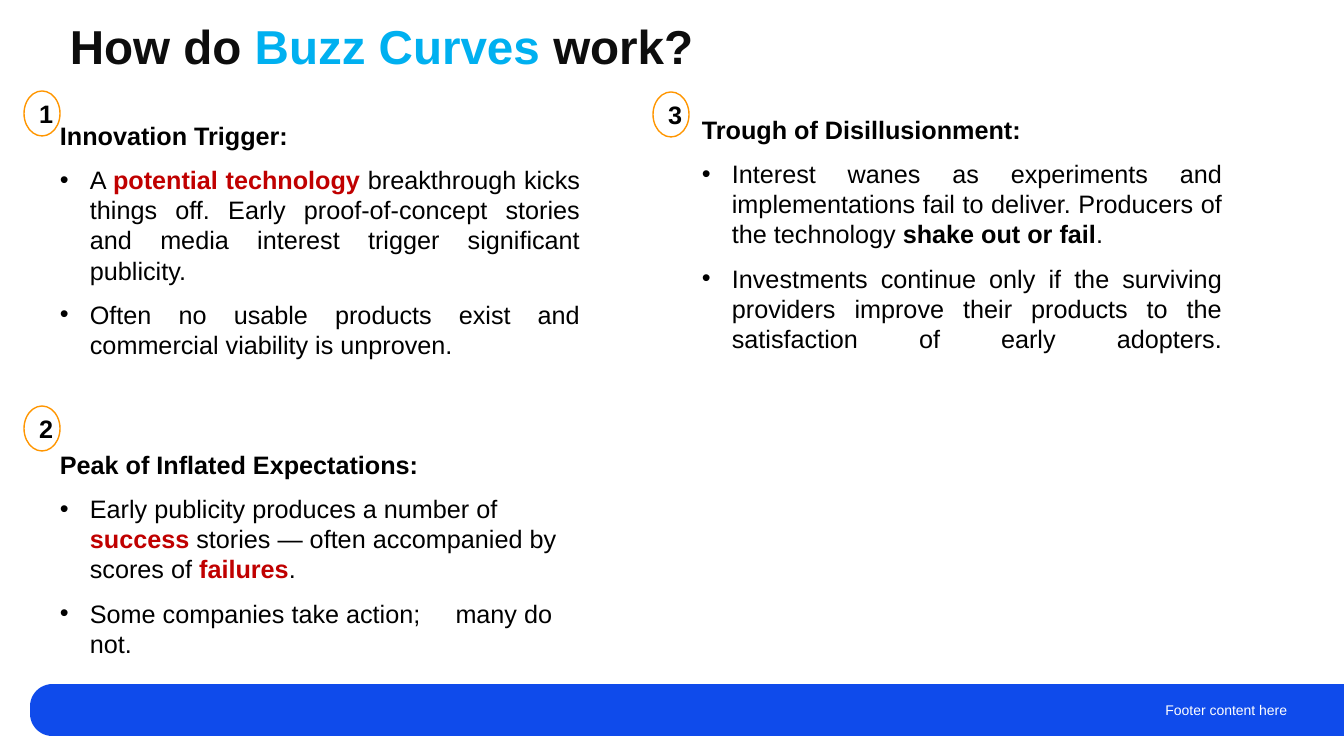
from dataclasses import dataclass

from lxml.etree import SubElement
from pptx import Presentation
from pptx.dml.color import RGBColor
from pptx.enum.shapes import MSO_SHAPE
from pptx.enum.text import MSO_ANCHOR, PP_ALIGN
from pptx.oxml.ns import qn
from pptx.util import Emu, Pt

EMU_PER_PX = 914400 / 100.8
FONT = "Arial"
BLACK, WHITE, RED = "000000", "FFFFFF", "C00000"
NEAR_BLACK, SKY_BLUE = "0D0D0D", "00B0F0"
ORANGE, FOOTER_BLUE = "FF9600", "0F4BEB"
BULLET_INDENT = 30
COLUMN_WIDTH = 540


@dataclass
class Span:
    text: str
    color: str = BLACK
    bold: bool = False
    spacing: int = 0  # extra letter spacing in points


@dataclass
class Phase:
    number: str
    badge_left: int
    badge_top: int
    text_left: int
    text_top: int
    text_height: int
    heading: str
    bullets: list[list[Span]]
    align: PP_ALIGN = PP_ALIGN.JUSTIFY


PHASES = [
    Phase("1", 24, 91, 50, 115, 260, "Innovation Trigger:", [
        [Span("A "), Span("potential technology ", RED, True),
         Span("breakthrough kicks things off. Early proof-of-concept stories "
              "and media interest trigger significant publicity.")],
        [Span("Often no usable products exist and commercial viability is unproven.")],
    ]),
    Phase("2", 24, 406, 50, 444, 230, "Peak of Inflated Expectations:", [
        [Span("Early publicity produces a number of "), Span("success", RED, True),
         Span(" stories — often accompanied by scores of "),
         Span("failures", RED, True), Span(".")],
        [Span("Some companies take action;"), Span(" ", spacing=20), Span("many do not.")],
    ], PP_ALIGN.LEFT),
    Phase("3", 653, 92, 692, 109, 290, "Trough of Disillusionment:", [
        [Span("Interest wanes as experiments and implementations fail to deliver. "
              "Producers of the technology "),
         Span("shake out or fail", bold=True), Span(".")],
        # The closing line break justifies the last line as well.
        [Span("Investments continue only if the surviving providers improve their "
              "products to the satisfaction of early adopters.\v")],
    ]),
]


def px(length: int) -> Emu:
    return Emu(round(length * EMU_PER_PX))


def rgb(color: str) -> RGBColor:
    return RGBColor.from_string(color)


def add_bullet(paragraph) -> None:
    properties = paragraph._p.get_or_add_pPr()
    properties.set("marL", str(px(BULLET_INDENT)))
    properties.set("indent", str(-px(BULLET_INDENT)))
    SubElement(properties, qn("a:buFont"), typeface=FONT)
    SubElement(properties, qn("a:buChar"), char="•")


def write_paragraph(paragraph, spans: list[Span], *, size: int = 18,
                    align: PP_ALIGN = PP_ALIGN.LEFT, space_after: int = 0,
                    line_spacing: float = 1.0, bullet: bool = False) -> None:
    paragraph.alignment = align
    paragraph.space_after = Pt(space_after)
    paragraph.line_spacing = line_spacing
    if bullet:
        add_bullet(paragraph)
    paragraph.font.size = Pt(size)
    for span in spans:
        # add_run keeps no line breaks, so each break is added between runs.
        for index, part in enumerate(span.text.split("\v")):
            if index:
                paragraph.add_line_break()
            if not part:
                continue
            run = paragraph.add_run()
            run.text = part
            run.font.name = FONT
            run.font.size = Pt(size)
            run.font.bold = span.bold
            run.font.color.rgb = rgb(span.color)
            if span.spacing:
                run.font._element.set("spc", str(span.spacing * 100))


def add_text_frame(slide, left: int, top: int, width: int, height: int,
                   anchor: MSO_ANCHOR = MSO_ANCHOR.TOP):
    frame = slide.shapes.add_textbox(px(left), px(top), px(width), px(height)).text_frame
    frame.word_wrap = True
    frame.vertical_anchor = anchor
    return frame


def add_filled_shape(slide, kind: MSO_SHAPE, left: int, top: int,
                     width: int, height: int, fill: str):
    shape = slide.shapes.add_shape(kind, px(left), px(top), px(width), px(height))
    shape.shadow.inherit = False
    shape.fill.solid()
    shape.fill.fore_color.rgb = rgb(fill)
    return shape


def add_footer(slide) -> None:
    """Draw the bar as an upright shape turned so its round end faces left."""
    bar = add_filled_shape(slide, MSO_SHAPE.ROUND_2_SAME_RECTANGLE,
                           661, 53, 52, 1314, FOOTER_BLUE)
    bar.adjustments[0] = 0.43
    bar.rotation = 270
    bar.line.fill.background()
    frame = add_text_frame(slide, 702, 690, 595, 40, MSO_ANCHOR.MIDDLE)
    write_paragraph(frame.paragraphs[0], [Span("Footer content here", WHITE)],
                    size=10, align=PP_ALIGN.RIGHT)


def add_title(slide) -> None:
    frame = add_text_frame(slide, 60, 18, 1138, 74)
    write_paragraph(frame.paragraphs[0], [
        Span("How do ", NEAR_BLACK, True),
        Span("Buzz Curves ", SKY_BLUE, True),
        Span("work?", NEAR_BLACK, True),
    ], size=34, line_spacing=0.9)


def add_phase(slide, phase: Phase) -> None:
    frame = add_text_frame(slide, phase.text_left, phase.text_top,
                           COLUMN_WIDTH, phase.text_height)
    write_paragraph(frame.paragraphs[0], [Span(phase.heading, bold=True)],
                    align=phase.align, space_after=10)
    for spans in phase.bullets:
        write_paragraph(frame.add_paragraph(), spans, align=phase.align,
                        space_after=10, bullet=True)

    badge = add_filled_shape(slide, MSO_SHAPE.OVAL, phase.badge_left,
                             phase.badge_top, 36, 45, WHITE)
    badge.line.color.rgb = rgb(ORANGE)
    badge.line.width = Pt(1)
    badge.text_frame.vertical_anchor = MSO_ANCHOR.MIDDLE
    write_paragraph(badge.text_frame.paragraphs[0], [Span(phase.number, bold=True)],
                    align=PP_ALIGN.CENTER)


def main() -> None:
    presentation = Presentation()
    presentation.slide_width = px(1344)
    presentation.slide_height = px(756)
    slide = presentation.slides.add_slide(presentation.slide_layouts[6])
    add_footer(slide)
    add_title(slide)
    for phase in PHASES:
        add_phase(slide, phase)
    presentation.save("out.pptx")


if __name__ == "__main__":
    main()
